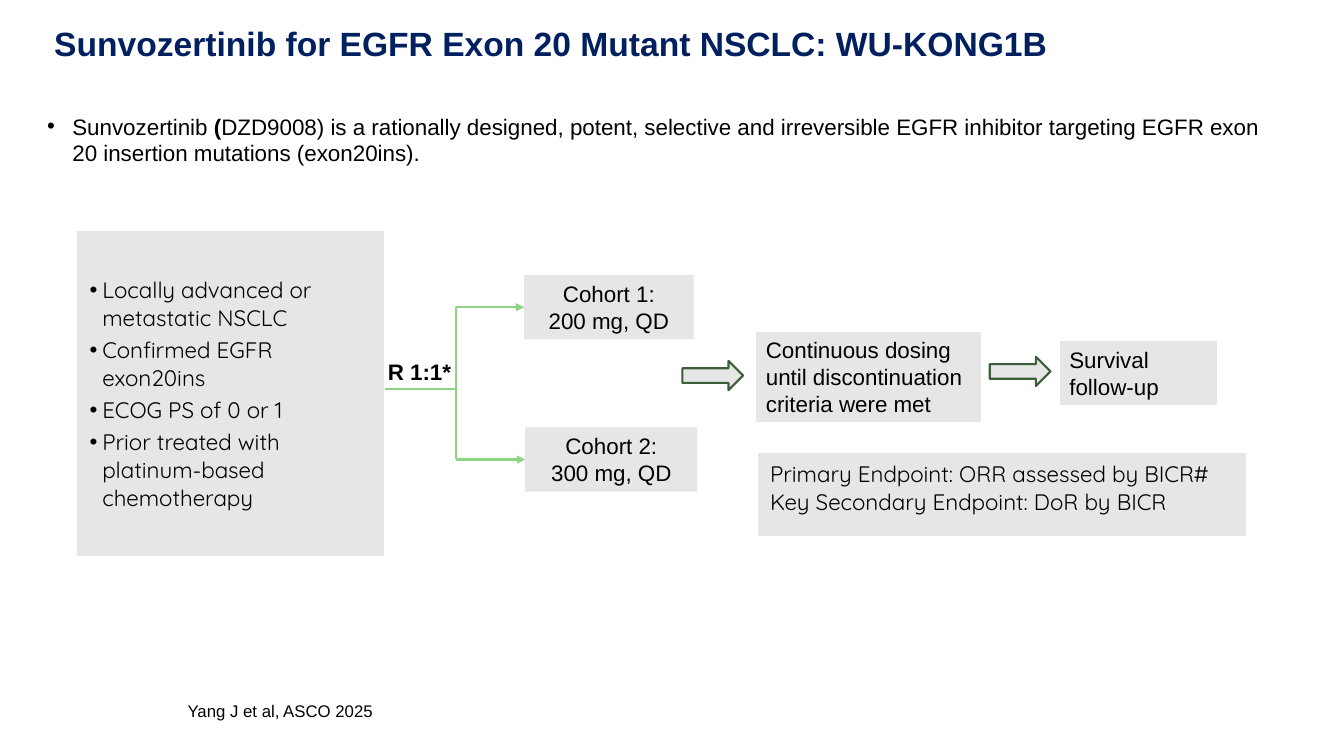
"""Build the WU-KONG1B study design slide."""
from lxml import etree
from pptx import Presentation, util as u
from pptx.dml.color import RGBColor
from pptx.enum import shapes, text
from pptx.oxml import ns

NAVY = RGBColor(0x00, 0x20, 0x60)
BLACK = RGBColor(0, 0, 0)
WHITE = RGBColor(0xFF, 0xFF, 0xFF)
GREY = RGBColor(0xE6, 0xE6, 0xE6)
GREEN = RGBColor(0x8E, 0xD4, 0x85)
DARK_GREEN = RGBColor(0x3E, 0x5D, 0x3A)

PLAIN_INSETS = (7.2, 3.6)
WIDE_INSETS = (9.36, 5.04)
TOP, MIDDLE = text.MSO_ANCHOR.TOP, text.MSO_ANCHOR.MIDDLE

TITLE = "Sunvozertinib for EGFR Exon 20 Mutant NSCLC: WU-KONG1B"
INTRO = [
    ("Sunvozertinib", False),
    (" (", True),
    ("DZD9008) is a rationally designed, potent, selective and irreversible EGFR "
     "inhibitor targeting EGFR exon 20 insertion mutations (exon20ins).", False),
]
ELIGIBILITY = [
    "Locally advanced or metastatic NSCLC",
    "Confirmed EGFR exon20ins",
    "ECOG PS of 0 or 1",
    "Prior treated with platinum-based chemotherapy",
]
ENDPOINTS = [
    "Primary Endpoint: ORR assessed by BICR#",
    "Key Secondary Endpoint: DoR by BICR",
]
COHORTS = [
    (["Cohort 1:", "200 mg, QD"], (374.4, 196.5, 121, 46)),
    (["Cohort 2:", "300 mg, QD"], (375.1, 305.2, 123.1, 46)),
]
STAGES = [
    (["Continuous dosing until discontinuation criteria were met"], (540, 236.5, 161, 65.4)),
    (["Survival follow-up"], (756.8, 243.5, 112.7, 46)),
]
BLOCK_ARROWS = [(487.4, 257.8), (707, 254.9)]
BLOCK_ARROW_SIZE = (43.4, 20.9)
ELIGIBILITY_AREA = (54.7, 164.9, 220.3, 232.6)
ENDPOINTS_AREA = (540.7, 323.3, 349.9, 59.8)
FORK_X, STEM_Y = 325.8, 277.9


def points(values):
    return [u.Pt(value) for value in values]


def add_bullet(para, indent):
    props = para._p.get_or_add_pPr()
    props.set("marL", str(u.Pt(indent)))
    props.set("indent", str(u.Pt(-indent)))
    etree.SubElement(props, ns.qn("a:buFont"), typeface="Arial")
    etree.SubElement(props, ns.qn("a:buChar"), char="•")


def write(frame, lines, size=16, font="Arial", color=BLACK, bold=False, bullet=0,
          before=0, spacing=None, align=text.PP_ALIGN.LEFT):
    for index, line in enumerate(lines):
        para = frame.add_paragraph() if index else frame.paragraphs[0]
        for words, strong in [(line, bold)] if isinstance(line, str) else line:
            span = para.add_run()
            span.text = words
            if strong != bold:
                span.font.bold = strong
        if bullet:
            add_bullet(para, bullet)
        para.alignment = align
        if index and before:
            para.space_before = u.Pt(before)
        if spacing:
            para.line_spacing = u.Pt(spacing)
        para.font.size, para.font.name, para.font.bold = u.Pt(size), font, bold
        para.font.color.rgb = color


def set_insets(holder, insets):
    across, down = points(insets)
    holder.margin_left = holder.margin_right = across
    holder.margin_top = holder.margin_bottom = down


def add_label(page, lines, area, grow=True, insets=PLAIN_INSETS, **style):
    frame = page.shapes.add_textbox(*points(area)).text_frame
    frame.word_wrap = True
    set_insets(frame, insets)
    if grow:
        frame.auto_size = text.MSO_AUTO_SIZE.SHAPE_TO_FIT_TEXT
    write(frame, lines, **style)


def add_box(page, area, kind=shapes.MSO_SHAPE.RECTANGLE, edge=None, width=0.75):
    box = page.shapes.add_shape(kind, *points(area))
    box.shadow.inherit = False
    box.fill.solid()
    box.fill.fore_color.rgb = GREY
    if edge is None:
        box.line.fill.background()
    else:
        box.line.color.rgb = edge
        box.line.width = u.Pt(width)
    return box


def add_text_box(page, lines, area, edge=None, anchor=TOP, **style):
    box = add_box(page, area, edge=edge)
    frame = box.text_frame
    frame.word_wrap = True
    frame.auto_size = text.MSO_AUTO_SIZE.SHAPE_TO_FIT_TEXT
    frame.vertical_anchor = anchor
    write(frame, lines, **style)
    return box


def add_panel(page, lines, area, anchor=TOP, **style):
    table = page.shapes.add_table(1, 1, *points(area)).table
    table.first_row = table.horz_banding = False
    cell = table.cell(0, 0)
    cell.vertical_anchor = anchor
    set_insets(cell, WIDE_INSETS)
    props = cell._tc.get_or_add_tcPr()
    for side in ("lnL", "lnR", "lnT", "lnB"):
        border = etree.SubElement(props, ns.qn(f"a:{side}"), w=str(u.Pt(1)))
        fill = etree.SubElement(border, ns.qn("a:solidFill"))
        etree.SubElement(fill, ns.qn("a:srgbClr"), val=str(WHITE))
    cell.fill.solid()
    cell.fill.fore_color.rgb = GREY
    write(cell.text_frame, lines, font="Quicksand", **style)


def add_line(page, start, end, target=None):
    line = page.shapes.add_connector(shapes.MSO_CONNECTOR.STRAIGHT, *points(start + end))
    line.line.color.rgb = GREEN
    line.line.width = u.Pt(1.5)
    if target is not None:
        line.end_connect(target, 1)
        etree.SubElement(line.line._get_or_add_ln(), ns.qn("a:tailEnd"), type="triangle")
    etree.SubElement(line._element.spPr, ns.qn("a:effectLst"))


def main():
    deck = Presentation()
    deck.slide_width, deck.slide_height = points((960, 540))
    page = deck.slides.add_slide(deck.slide_layouts[6])

    add_label(page, [TITLE], (31.7, 13, 748, 36), size=24, color=NAVY, bold=True)
    add_label(page, [INTRO], (26.6, 77, 887, 139.7), grow=False, bullet=18)
    add_panel(page, ELIGIBILITY, ELIGIBILITY_AREA, anchor=MIDDLE, bullet=9, before=3)

    fork_ends = []
    for lines, area in COHORTS:
        left, top, _, height = area
        box = add_text_box(page, lines, area, align=text.PP_ALIGN.CENTER)
        branch_y = top + height / 2
        add_line(page, (FORK_X, branch_y), (left, branch_y), box)
        fork_ends.append((FORK_X, branch_y))
    add_line(page, *fork_ends)
    add_line(page, (ELIGIBILITY_AREA[0] + ELIGIBILITY_AREA[2], STEM_Y), (FORK_X, STEM_Y))
    add_label(page, ["R 1:1*"], (270, 252, 72, 26.6), bold=True)

    for lines, area in STAGES:
        add_text_box(page, lines, area, edge=WHITE, anchor=MIDDLE)
    for corner in BLOCK_ARROWS:
        add_box(page, corner + BLOCK_ARROW_SIZE, shapes.MSO_SHAPE.RIGHT_ARROW, DARK_GREEN, 1.5)

    add_panel(page, ENDPOINTS, ENDPOINTS_AREA, spacing=20)
    add_label(page, ["Yang J et al, ASCO 2025"], (124.6, 495.4, 835.4, 44),
              grow=False, insets=WIDE_INSETS, size=12)
    deck.save("out.pptx")


if __name__ == "__main__":
    main()
